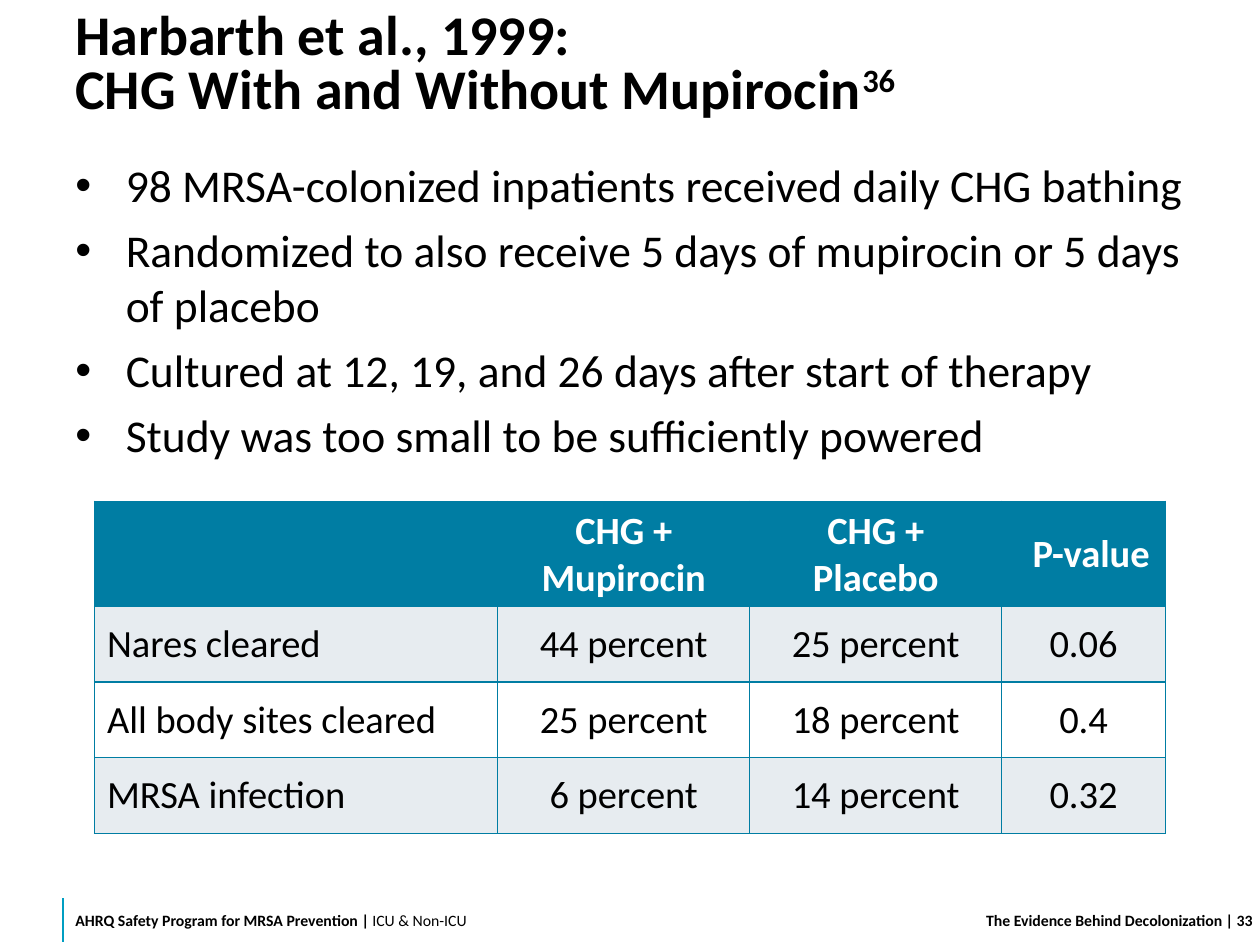
import pptx
import pptx.dml.color
import pptx.enum.text
import pptx.oxml
import pptx.oxml.ns
import pptx.util
from pptx.util import Inches

FONT = "Calibri"
BLACK, WHITE, TEAL, CYAN, PALE = "000000", "FFFFFF", "007DA3", "009EC2", "E7ECF0"
ALIGN = pptx.enum.text.PP_ALIGN
MID = pptx.enum.text.MSO_ANCHOR.MIDDLE
TOP = pptx.enum.text.MSO_ANCHOR.TOP


def color(code):
    return pptx.dml.color.RGBColor.from_string(code)


def node(tag, inner="", **attrs):
    """Make a drawing element from its tag, inner XML and attributes."""
    text = "".join(f' {key}="{val}"' for key, val in attrs.items())
    space = pptx.oxml.ns.nsdecls("a")
    return pptx.oxml.parse_xml(f"<a:{tag} {space}{text}>{inner}</a:{tag}>")


def write(para, *runs, size=9, bold=False, ink=BLACK, align=None, lines=None,
          before=0, bullet=False, left=0):
    """Fill a paragraph; a run is text or (text, extra rPr settings)."""
    props = para._p.get_or_add_pPr()
    if left:
        props.set("marL", str(Inches(left)))
        props.set("indent", str(Inches(-left if bullet else 0)))
    if bullet:
        props.append(node("buFont", typeface="Arial"))
        props.append(node("buChar", char="•"))
    para.alignment, para.line_spacing = align, lines
    para.space_before = pptx.util.Pt(before)
    for item in runs:
        text, extra = (item, {}) if isinstance(item, str) else item
        if text == "\n":
            para.add_line_break()
            continue
        run = para.add_run()
        run.text = text
        font = run.font
        font.name, font.size, font.bold = FONT, pptx.util.Pt(size), bold
        font.color.rgb = color(ink)
        for key, val in extra.items():
            run._r.get_or_add_rPr().set(key, val)


def frame(slide, box, inset=(0.1, 0.05, 0.1, 0.05), anchor=MID):
    """Add a wrapping text box and return its text frame."""
    area = slide.shapes.add_textbox(*map(Inches, box)).text_frame
    area.word_wrap, area.vertical_anchor = True, anchor
    (area.margin_left, area.margin_top,
     area.margin_right, area.margin_bottom) = map(Inches, inset)
    return area


def title(slide, box):
    area = frame(slide, box, (0.1, 0.1, 0.1, 0.05))
    write(area.paragraphs[0], "Harbarth et al., 1999:", "\n",
          "CHG With and Without Mupirocin", ("36", {"baseline": "30000"}),
          size=32, bold=True, lines=0.8)


def body(slide, box, points):
    area = frame(slide, box, anchor=TOP)
    for num, point in enumerate(points):
        para = area.add_paragraph() if num else area.paragraphs[0]
        write(para, point, size=26, before=6 if num else 0, bullet=True, left=0.4)


def border(cell):
    props = cell._tc.get_or_add_tcPr()
    fill = f'<a:solidFill><a:srgbClr val="{TEAL}"/></a:solidFill>'
    for spot, side in enumerate(("lnL", "lnR", "lnT", "lnB")):
        props.insert(spot, node(side, fill, w=pptx.util.Pt(1)))


def results(slide, box, rows, widths, heights):
    grid = slide.shapes.add_table(len(rows), len(widths), *map(Inches, box)).table
    for col, width in zip(grid.columns, widths):
        col.width = Inches(width)
    for row, height in zip(grid.rows, heights):
        row.height = Inches(height)
    for r, row in enumerate(rows):
        head = r == 0
        for c, text in enumerate(row):
            cell = grid.cell(r, c)
            cell.vertical_anchor = MID
            cell.fill.solid()
            cell.fill.fore_color.rgb = color(TEAL if head else PALE if r % 2 else WHITE)
            border(cell)
            if text:
                write(cell.text_frame.paragraphs[0], text, size=22, bold=head,
                      ink=WHITE if head else BLACK,
                      align=ALIGN.CENTER if c else ALIGN.LEFT,
                      left=0.12 if text == "P-value" else 0)


def footer(slide, box):
    left, top, width, height = box
    # Program name beside its rule
    area = frame(slide, (left, top, 4.1, height), (0.1, 0, 0.1, 0))
    write(area.paragraphs[0], ("AHRQ Safety Program for MRSA Prevention | ", {"b": "1"}),
          "ICU & Non-ICU")
    rule = slide.shapes.add_connector(
        pptx.enum.shapes.MSO_CONNECTOR.STRAIGHT, Inches(left), Inches(top + 0.03),
        Inches(left), Inches(top + 0.38))
    rule.line.color.rgb, rule.line.width = color(CYAN), pptx.util.Pt(1)
    rule._element.spPr.append(node("effectLst"))
    # Talk name and page number
    page = left + width - 0.3
    area = frame(slide, (page - 2.6, top, 2.6, height), (0.1, 0.05, 0, 0.05))
    write(area.paragraphs[0], "The Evidence Behind Decolonization", bold=True,
          align=ALIGN.RIGHT)
    area = frame(slide, (page, top, 0.3, height), (0, 0.05, 0, 0.05))
    write(area.paragraphs[0], " | 33", bold=True)


def main():
    deck = pptx.Presentation()
    deck.slide_width, deck.slide_height = Inches(10), Inches(7.5)
    slide = deck.slides.add_slide(deck.slide_layouts[6])
    footer(slide, (0.5, 7.1, 9.5, 0.4))
    title(slide, (0.5, 0, 9, 1))
    body(slide, (0.5, 1.2, 9, 2.63), [
        "98 MRSA-colonized inpatients received daily CHG bathing",
        "Randomized to also receive 5 days of mupirocin or 5 days of placebo",
        "Cultured at 12, 19, and 26 days after start of therapy",
        "Study was too small to be sufficiently powered",
    ])
    results(slide, (0.75, 3.98, 8.5, 2.63), [
        ("", "CHG + Mupirocin", "CHG + Placebo", "P-value"),
        ("Nares cleared", "44 percent", "25 percent", "0.06"),
        ("All body sites cleared", "25 percent", "18 percent", "0.4"),
        ("MRSA infection", "6 percent", "14 percent", "0.32"),
    ], (3.2, 2, 2, 1.3), (0.83, 0.6, 0.6, 0.6))
    deck.save("out.pptx")


if __name__ == "__main__":
    import pptx.enum.shapes
    main()
